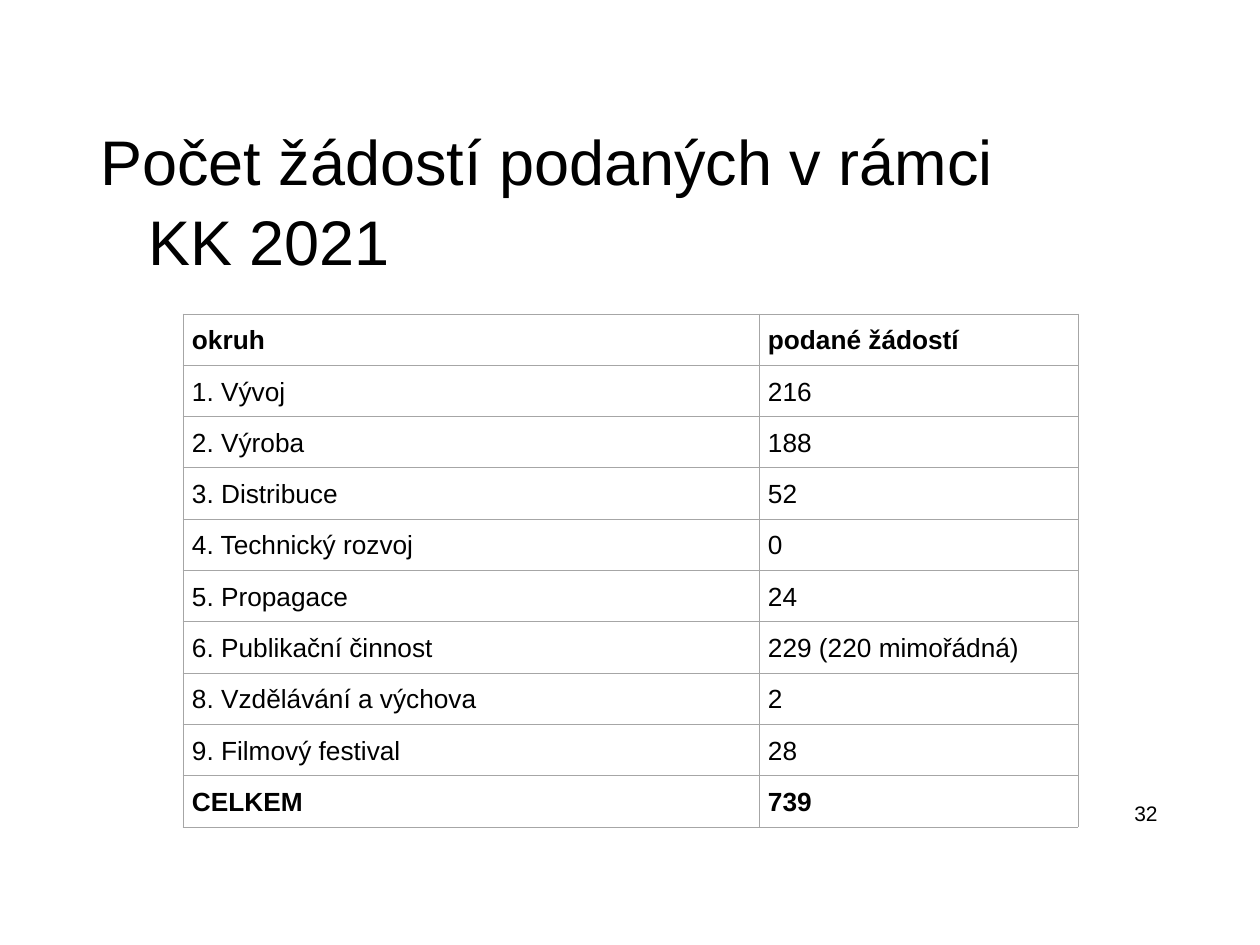
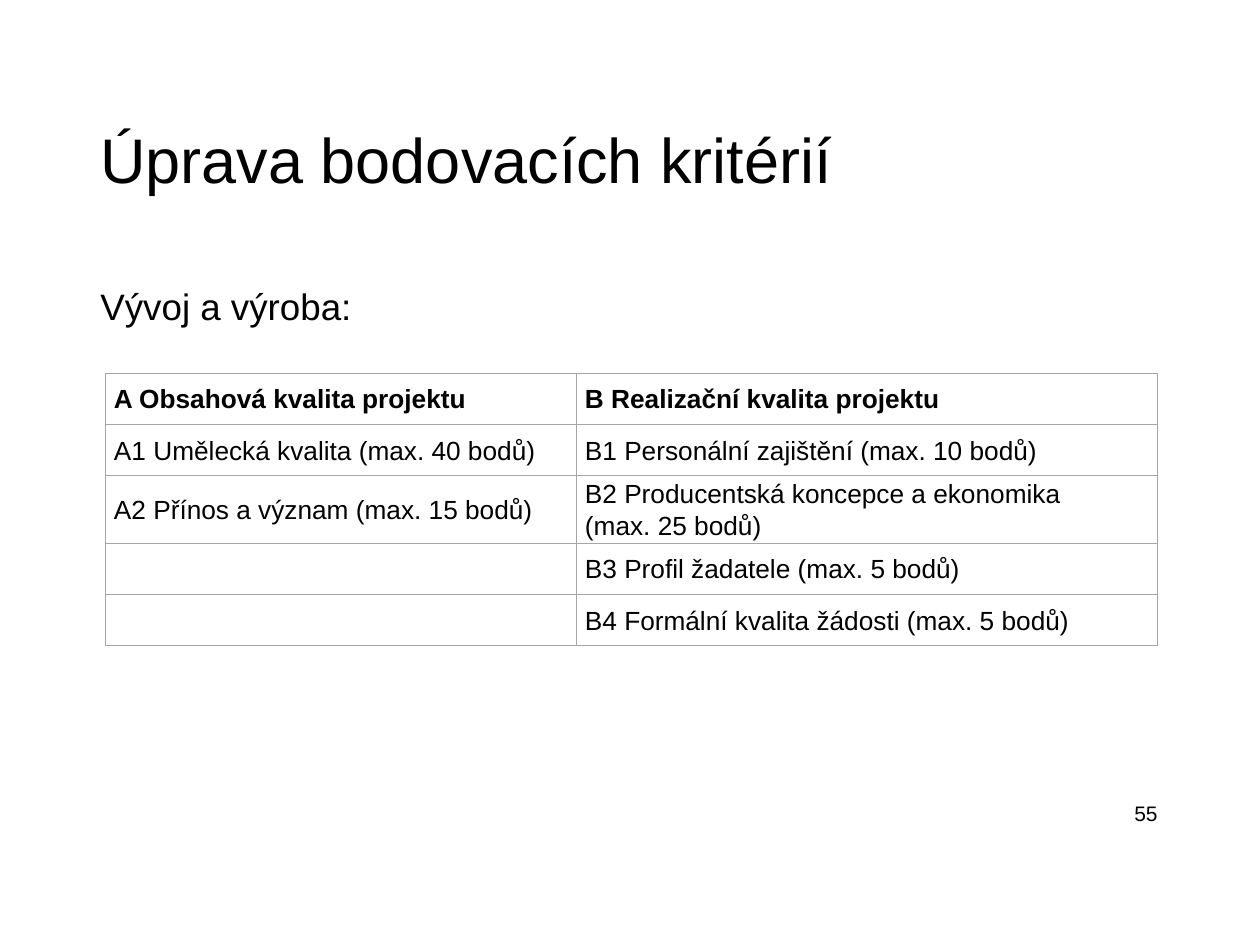
import pptx
import pptx.dml.color
import pptx.enum.text
import pptx.oxml
import pptx.oxml.ns
import pptx.util

# Shared look
EMU_PER_PX = 914400 // 126
BLACK = pptx.dml.color.RGBColor(0x00, 0x00, 0x00)
GRID_GREY = pptx.dml.color.RGBColor(0xA6, 0xA6, 0xA6)
MIDDLE = pptx.enum.text.MSO_ANCHOR.MIDDLE
RIGHT = pptx.enum.text.PP_ALIGN.RIGHT
Pt = pptx.util.Pt

PAGE_NUMBER_BOX = (876, 788, 294, 50)
HANGING_INDENT = 48
ROW_HEIGHT = 51.3
CELL_MARGINS = {"margin_left": 9, "margin_right": 9, "margin_top": 0, "margin_bottom": 0}
BORDER_TAGS = ("a:lnL", "a:lnR", "a:lnT", "a:lnB")

TITLE_FORMAT = {"line_spacing": 1.05, "space_after": Pt(18)}
SUBTITLE_FORMAT = {"line_spacing": 1.1, "space_before": Pt(29.5)}
NUMBER_FORMAT = {"alignment": RIGHT}
CELL_FORMAT = {"line_spacing": 1.07}

# Content
SLIDES = [
    {
        "title": "Počet žádostí podaných v rámci KK 2021",
        "text_box": (88, 113, 939, 736),
        "number": "32",
        "table_corner": (183, 314),
        "column_widths": (576, 319),
        "bold_rows": ("okruh", "CELKEM"),
        "rows": [
            ("okruh", "podané žádostí"),
            ("1. Vývoj", "216"),
            ("2. Výroba", "188"),
            ("3. Distribuce", "52"),
            ("4. Technický rozvoj", "0"),
            ("5. Propagace", "24"),
            ("6. Publikační činnost", "229 (220 mimořádná)"),
            ("8. Vzdělávání a výchova", "2"),
            ("9. Filmový festival", "28"),
            ("CELKEM", "739"),
        ],
    },
    {
        "title": "Úprava bodovacích kritérií",
        "subtitle": "Vývoj a výroba:",
        "text_box": (88, 111, 1053, 751),
        "number": "55",
        "table_corner": (105, 373),
        "column_widths": (471, 581),
        "bold_rows": ("A Obsahová kvalita projektu",),
        "rows": [
            ("A Obsahová kvalita projektu", "B Realizační kvalita projektu"),
            ("A1 Umělecká kvalita (max. 40 bodů)", "B1 Personální zajištění (max. 10 bodů)"),
            ("A2 Přínos a význam (max. 15 bodů)",
             "B2 Producentská koncepce a ekonomika\n(max. 25 bodů)"),
            ("", "B3 Profil žadatele (max. 5 bodů)"),
            ("", "B4 Formální kvalita žádosti (max. 5 bodů)"),
        ],
    },
]


def px(length):
    return pptx.util.Emu(round(length * EMU_PER_PX))


def set_all(target, values):
    for name, value in values.items():
        setattr(target, name, value)


def style_paragraph(paragraph, size, values, bold=False):
    set_all(paragraph, values)
    for run in paragraph.runs:
        set_all(run.font, {"name": "Arial", "size": Pt(size), "bold": bold})
        run.font.color.rgb = BLACK


def add_text_frame(slide, box):
    frame = slide.shapes.add_textbox(*map(px, box)).text_frame
    frame.word_wrap = True
    return frame


def add_heading(slide, content):
    frame = add_text_frame(slide, content["text_box"])
    title = frame.paragraphs[0]
    title.text = content["title"]
    properties = title._p.get_or_add_pPr()
    properties.set("marL", str(px(HANGING_INDENT)))
    properties.set("indent", str(-px(HANGING_INDENT)))
    style_paragraph(title, 36, TITLE_FORMAT)
    if "subtitle" in content:
        subtitle = frame.add_paragraph()
        subtitle.text = content["subtitle"]
        style_paragraph(subtitle, 21, SUBTITLE_FORMAT)


def add_page_number(slide, number):
    frame = add_text_frame(slide, PAGE_NUMBER_BOX)
    frame.vertical_anchor = MIDDLE
    frame.text = number
    style_paragraph(frame.paragraphs[0], 12, NUMBER_FORMAT)


def add_borders(cell):
    properties = cell._tc.get_or_add_tcPr()
    for position, tag in enumerate(BORDER_TAGS):
        border = pptx.oxml.parse_xml(
            f'<{tag} {pptx.oxml.ns.nsdecls("a")} w="{Pt(0.5)}"><a:solidFill>'
            f'<a:srgbClr val="{GRID_GREY}"/></a:solidFill></{tag}>')
        properties.insert(position, border)


def add_table(slide, content):
    rows, widths = content["rows"], content["column_widths"]
    box = (*content["table_corner"], sum(widths), ROW_HEIGHT * len(rows))
    table = slide.shapes.add_table(len(rows), len(widths), *map(px, box)).table
    set_all(table, {"first_row": False, "horz_banding": False})
    for column, width in zip(table.columns, widths):
        column.width = px(width)
    for table_row, texts in zip(table.rows, rows):
        table_row.height = px(ROW_HEIGHT)
        for cell, text in zip(table_row.cells, texts):
            cell.text = text
            cell.vertical_anchor = MIDDLE
            set_all(cell, {side: px(margin) for side, margin in CELL_MARGINS.items()})
            cell.fill.background()
            add_borders(cell)
            for paragraph in cell.text_frame.paragraphs:
                style_paragraph(paragraph, 15, CELL_FORMAT, texts[0] in content["bold_rows"])


def main():
    presentation = pptx.Presentation()
    presentation.slide_width, presentation.slide_height = px(1260), px(945)
    for content in SLIDES:
        slide = presentation.slides.add_slide(presentation.slide_layouts[6])
        add_heading(slide, content)
        add_page_number(slide, content["number"])
        add_table(slide, content)
    presentation.save("out.pptx")


if __name__ == "__main__":
    main()
